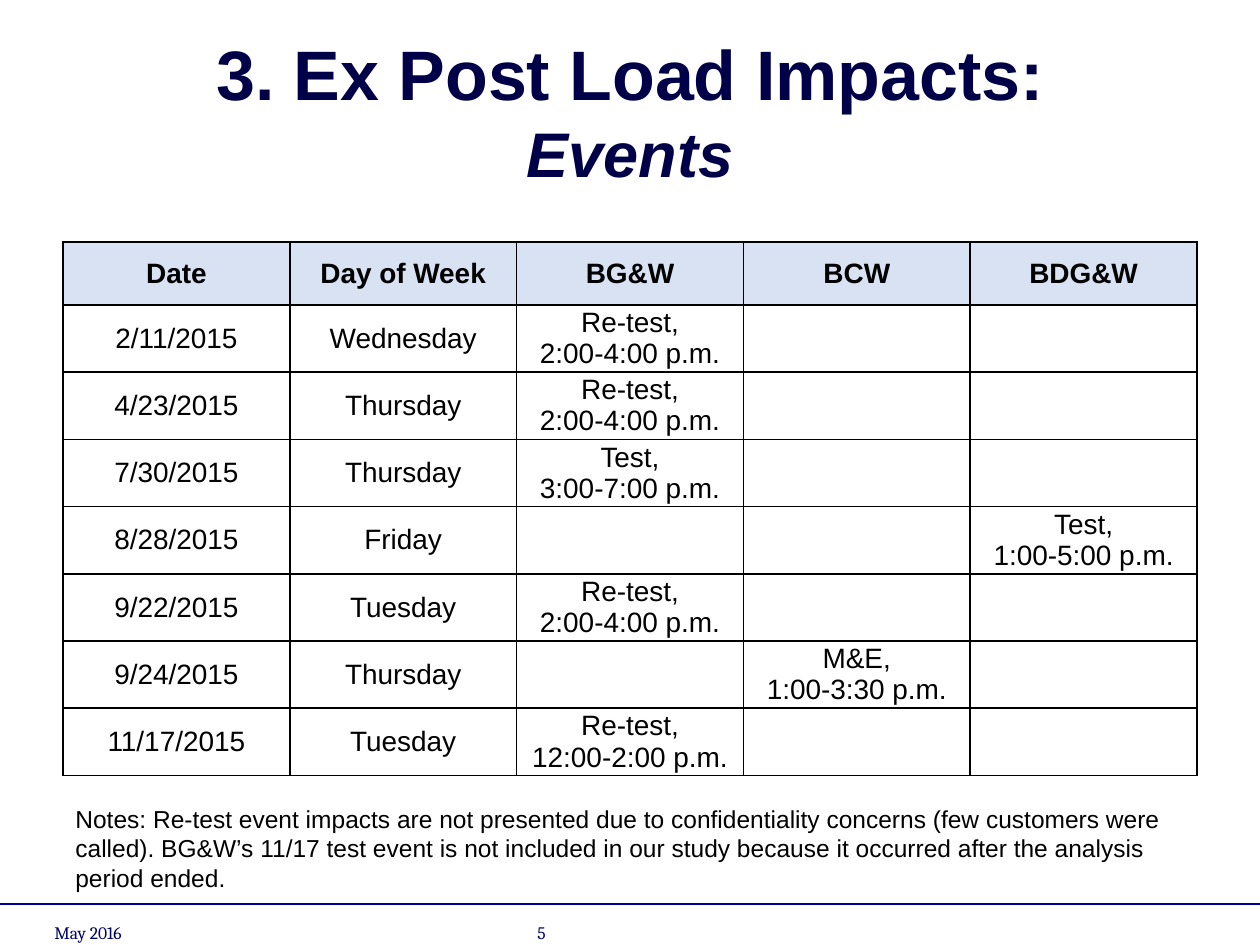
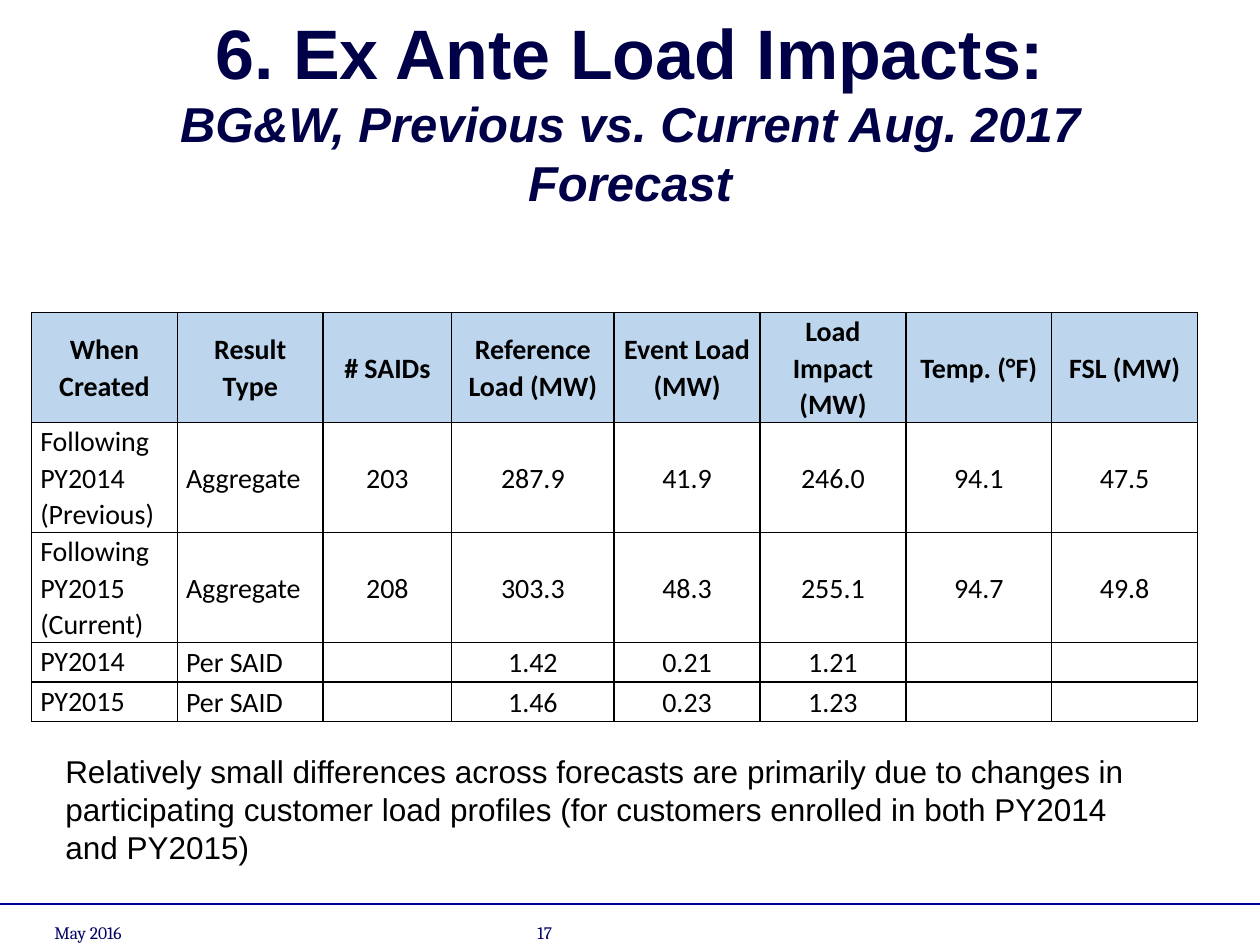
from dataclasses import dataclass

from lxml import etree
from pptx import Presentation
from pptx.dml.color import RGBColor
from pptx.enum.shapes import MSO_CONNECTOR
from pptx.enum.text import MSO_ANCHOR, MSO_AUTO_SIZE, PP_ALIGN
from pptx.oxml.ns import qn
from pptx.util import Inches, Pt

STRAIGHT = MSO_CONNECTOR.STRAIGHT
TOP, MIDDLE, BOTTOM = MSO_ANCHOR.TOP, MSO_ANCHOR.MIDDLE, MSO_ANCHOR.BOTTOM
LEFT, CENTER = PP_ALIGN.LEFT, PP_ALIGN.CENTER
FIXED = MSO_AUTO_SIZE.NONE
TITLE_ONLY = 5
GRID = Inches(0.25)  # the slide is 40 columns by 30 rows


@dataclass(frozen=True)
class Theme:
    title: str = "000048"
    footer: str = "000066"
    rule: str = "000099"
    text: str = "000000"
    font: str = "Arial"
    footer_font: str = "Cambria"
    title_size: int = 40
    table_size: int = 16
    footer_size: int = 10


theme = Theme()


def style(paragraph, font_name, size, color, bold=False, align=LEFT):
    paragraph.alignment = align
    font = paragraph.font
    font.name, font.size, font.bold = font_name, Pt(size), bold
    font.color.rgb = RGBColor.from_string(color)


def add_text(page, place, text, font_name, size, color, anchor=TOP):
    box = page.shapes.add_textbox(*(round(step * GRID) for step in place))
    frame = box.text_frame
    frame.word_wrap = True
    frame.vertical_anchor = anchor
    frame.text = text
    style(frame.paragraphs[0], font_name, size, color)


# Content of the two slides, with places in grid steps
RETEST = "Re-test,\n2:00-4:00 p.m."
slides = [
    dict(
        number="5", title="3. Ex Post Load Impacts:",
        subtitle="Events", subtitle_size=36,
        table_at=(2, 7.68), columns=[7.2] * 5, rows=[2] + [1.98] * 7,
        header_fill="D9E2F3", table_font="Arial", spacing=1.0, left_columns=0,
        cells=[
            ["Date", "Day of Week", "BG&W", "BCW", "BDG&W"],
            ["2/11/2015", "Wednesday", RETEST, "", ""],
            ["4/23/2015", "Thursday", RETEST, "", ""],
            ["7/30/2015", "Thursday", "Test,\n3:00-7:00 p.m.", "", ""],
            ["8/28/2015", "Friday", "", "", "Test,\n1:00-5:00 p.m."],
            ["9/22/2015", "Tuesday", RETEST, "", ""],
            ["9/24/2015", "Thursday", "", "M&E,\n1:00-3:30 p.m.", ""],
            ["11/17/2015", "Tuesday", "Re-test,\n12:00-2:00 p.m.", "", ""],
        ],
        note="Notes: Re-test event impacts are not presented due to confidentiality "
             "concerns (few customers were called). BG&W’s 11/17 test event is not "
             "included in our study because it occurred after the analysis period ended.",
        note_at=(2, 25.32, 36, 3.24), note_size=14,
    ),
    dict(
        number="17", title="6. Ex Ante Load Impacts:",
        subtitle="BG&W, Previous vs. Current Aug. 2017 Forecast", subtitle_size=28,
        table_at=(1, 9.92), columns=[4.63, 4.63, 4.08, 5.16] + [4.63] * 4,
        rows=[3.49] * 3 + [1.26] * 2,
        header_fill="BDD6EE", table_font="Calibri", spacing=1.07, left_columns=2,
        cells=[
            ["When Created", "Result Type", "# SAIDs", "Reference Load (MW)",
             "Event Load (MW)", "Load Impact (MW)", "Temp. (°F)", "FSL (MW)"],
            ["Following PY2014 (Previous)", "Aggregate", "203", "287.9", "41.9",
             "246.0", "94.1", "47.5"],
            ["Following PY2015 (Current)", "Aggregate", "208", "303.3", "48.3",
             "255.1", "94.7", "49.8"],
            ["PY2014", "Per SAID", "", "1.42", "0.21", "1.21", "", ""],
            ["PY2015", "Per SAID", "", "1.46", "0.23", "1.23", "", ""],
        ],
        note="Relatively small differences across forecasts are primarily due to "
             "changes in participating customer load profiles (for customers enrolled "
             "in both PY2014 and PY2015)",
        note_at=(1.68, 23.68, 34.68, 4.04), note_size=18,
    ),
]

deck = Presentation()
deck.slide_width, deck.slide_height = 40 * GRID, 30 * GRID

for content in slides:
    page = deck.slides.add_slide(deck.slide_layouts[TITLE_ONLY])

    # Footer rule, date and page number
    rule_top = round(28.7 * GRID)
    rule = page.shapes.add_connector(STRAIGHT, 0, rule_top, deck.slide_width, rule_top)
    rule.line.color.rgb = RGBColor.from_string(theme.rule)
    rule.line.width = Pt(0.75)
    etree.SubElement(rule._element.spPr, qn("a:effectLst"))
    for column, text in ((1.33, "May 2016"), (16.67, content["number"])):
        add_text(page, (column, 28.06, 9.33, 2.07), text, theme.footer_font,
                 theme.footer_size, theme.footer, BOTTOM)

    # Title with an italic second line
    title = page.shapes.title
    title.left, title.top, title.width, title.height = (
        step * GRID for step in (2, 1, 36, 5))
    frame = title.text_frame
    frame.auto_size = FIXED
    frame.word_wrap = True
    frame.vertical_anchor = MIDDLE
    heading = frame.paragraphs[0]
    style(heading, theme.font, theme.title_size, theme.title, True, CENTER)
    heading.add_run().text = content["title"]
    heading.add_line_break()
    span = heading.add_run()
    span.text = content["subtitle"]
    span.font.size = Pt(content["subtitle_size"])
    span.font.italic = True

    # Table
    columns, rows = content["columns"], content["rows"]
    left, top, width, height = (
        round(step * GRID) for step in (*content["table_at"], sum(columns), sum(rows)))
    table = page.shapes.add_table(
        len(rows), len(columns), left, top, width, height).table
    table.horz_banding = False
    for column, steps in zip(table.columns, columns):
        column.width = round(steps * GRID)
    for row, steps in zip(table.rows, rows):
        row.height = round(steps * GRID)

    for row_index, texts in enumerate(content["cells"]):
        is_header = row_index == 0
        for column_index, text in enumerate(texts):
            cell = table.cell(row_index, column_index)
            cell.text = text
            is_left = not is_header and column_index < content["left_columns"]
            cell.vertical_anchor = TOP if is_left and column_index == 0 else MIDDLE
            cell.margin_left = cell.margin_right = Inches(0.07)
            cell.margin_top = cell.margin_bottom = 0
            for para in cell.text_frame.paragraphs:
                style(para, content["table_font"], theme.table_size, theme.text,
                      is_header, LEFT if is_left else CENTER)
                para.line_spacing = content["spacing"]
            # Borders come before the fill in the cell properties
            properties = cell._tc.get_or_add_tcPr()
            for edge in ("a:lnL", "a:lnR", "a:lnT", "a:lnB"):
                border = etree.SubElement(properties, qn(edge), w=str(Pt(1)))
                paint = etree.SubElement(border, qn("a:solidFill"))
                etree.SubElement(paint, qn("a:srgbClr"), val=theme.text)
            if is_header:
                cell.fill.solid()
                cell.fill.fore_color.rgb = RGBColor.from_string(content["header_fill"])
            else:
                cell.fill.background()

    # Note below the table
    add_text(page, content["note_at"], content["note"], theme.font,
             content["note_size"], theme.text)

deck.save("out.pptx")
